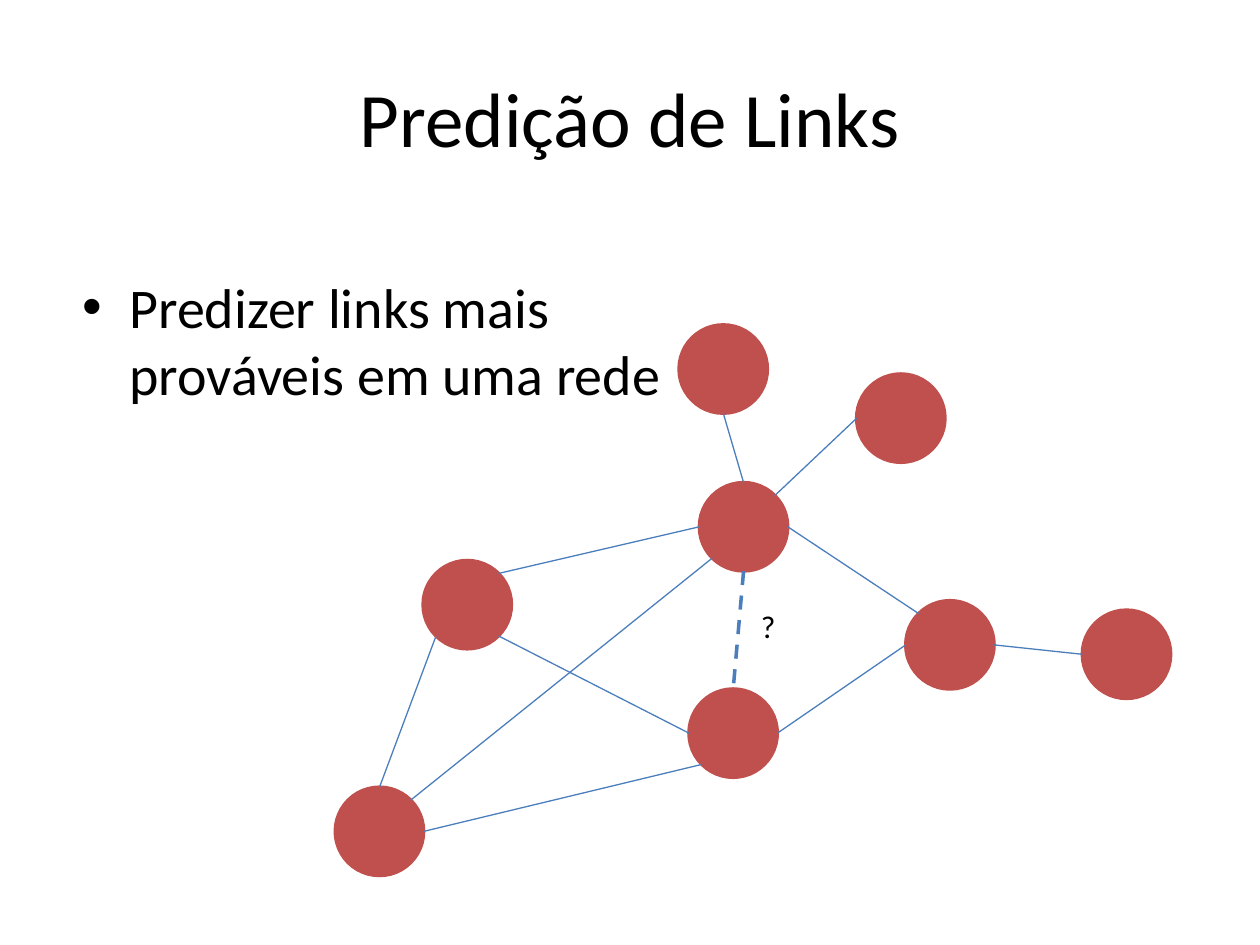
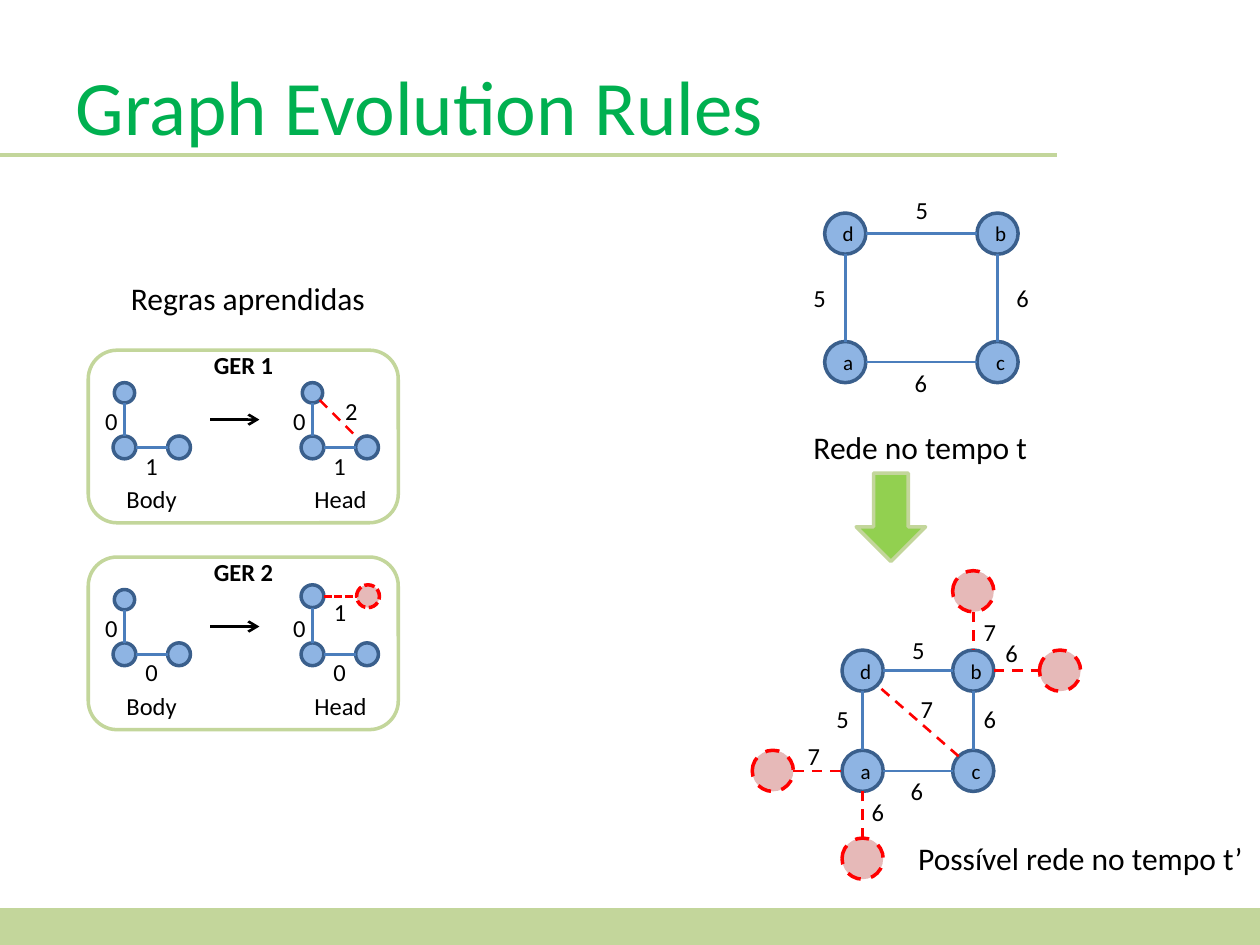
from collections import namedtuple
from math import cos, radians, sin

from lxml.etree import SubElement as Sub
from pptx import Presentation
from pptx.dml.color import RGBColor
from pptx.enum.dml import MSO_LINE as Dash
from pptx.enum.shapes import MSO_CONNECTOR as Wire, MSO_SHAPE as Form
from pptx.enum.text import MSO_ANCHOR as Anchor, MSO_AUTO_SIZE as Fit, PP_ALIGN as Align
from pptx.oxml.ns import qn
from pptx.util import Cm, Pt

FONT = "Calibri"
BLACK, RED, BRICK = "000000", "FF0000", "C0504D"
BLUE, SKY, NAVY = "4B7EBC", "8EB4E3", "3A5F8C"
PINK, SAGE, LIME, GREEN = "E6B9B8", "C3D69B", "92D050", "00B050"
TOP, TOP_L, LEFT, LOW_L, LOW, LOW_R, RIGHT, TOP_R = range(8)

Node = namedtuple("Node", "x y size")


def tint(code):
    return RGBColor.from_string(code)


def spot(node, site):
    turn = radians(90 + 45 * site)
    half = node.size / 2
    return node.x + half * cos(turn), node.y - half * sin(turn)


class Deck:
    """Holds the shared style and draws on the current slide."""

    def __init__(self):
        self.show = Presentation()
        self.show.slide_width, self.show.slide_height = Cm(25.4), Cm(19.05)

    def start(self, layout, text, y, color=BLACK, align=Align.CENTER):
        self.slide = self.show.slides.add_slide(self.show.slide_layouts[layout])
        self.fill_in(self.slide.shapes.title, text, (1.27, y, 22.86, 3.18),
                     44, color, align, Anchor.MIDDLE)

    def fill_in(self, holder, text, box, size, color, align, anchor):
        holder.left, holder.top, holder.width, holder.height = map(Cm, box)
        frame = holder.text_frame
        frame.text = text
        frame.auto_size = Fit.NONE
        frame.vertical_anchor = anchor
        self.style(frame, size, color, align)

    def style(self, frame, size, color=BLACK, align=Align.LEFT, bold=False):
        for para in frame.paragraphs:
            para.alignment = align
            for run in para.runs:
                font = run.font
                font.name, font.size, font.bold = FONT, Pt(size), bold
                font.color.rgb = tint(color)

    def list(self, text, box):
        self.fill_in(self.slide.placeholders[1], text, box, 32, BLACK,
                     Align.LEFT, Anchor.TOP)

    def label(self, text, x, y, wide=0.76, size=14, bold=False):
        high = 0.86 if size == 14 else 1.02
        box = self.slide.shapes.add_textbox(Cm(x), Cm(y), Cm(wide), Cm(high))
        frame = box.text_frame
        frame.text = text
        frame.word_wrap = False
        frame.auto_size = Fit.SHAPE_TO_FIT_TEXT
        self.style(frame, size, bold=bold)

    def shape(self, form, box, fill=None, edge=None, dash=None):
        item = self.slide.shapes.add_shape(form, *map(Cm, box))
        item.shadow.inherit = False
        if fill:
            item.fill.solid()
            item.fill.fore_color.rgb = tint(fill)
        else:
            item.fill.background()
        if edge:
            item.line.color.rgb = tint(edge)
            item.line.width = Pt(2)
            item.line.dash_style = dash
        else:
            item.line.fill.background()
        return item

    def node(self, x, y, size, text="", fill=SKY, edge=NAVY, dash=None):
        box = x - size / 2, y - size / 2, size, size
        item = self.shape(Form.OVAL, box, fill, edge, dash)
        if text:
            frame = item.text_frame
            frame.text = text
            frame.word_wrap = False
            frame.vertical_anchor = Anchor.MIDDLE
            frame.margin_left = Cm(0.12)
            frame.margin_right = frame.margin_top = frame.margin_bottom = 0
            self.style(frame, 12, align=Align.CENTER)
        return Node(x, y, size)

    def ghost(self, x, y, size=0.83, dash=Dash.DASH):
        return self.node(x, y, size, fill=PINK, edge=RED, dash=dash)

    def line(self, start, end, color=BLUE, width=1.5, dash=None, arrow=False):
        wire = self.slide.shapes.add_connector(
            Wire.STRAIGHT, *map(Cm, (*start, *end)))
        wire.line.color.rgb = tint(color)
        wire.line.width = Pt(width)
        wire.line.dash_style = dash
        props = wire.element.spPr
        if arrow:
            Sub(props.find(qn("a:ln")), qn("a:tailEnd"), type="arrow")
        Sub(props, qn("a:effectLst"))

    def link(self, one, out, two, into, **look):
        self.line(spot(one, out), spot(two, into), **look)

    def square(self, x, y, wide, high, marks):
        a, b, c, d = (self.node(*place, 0.83, name) for name, place in (
            ("a", (x, y + high)), ("b", (x + wide, y)),
            ("c", (x + wide, y + high)), ("d", (x, y))))
        for ends in ((d, LOW, a, TOP), (b, LEFT, d, RIGHT),
                     (a, RIGHT, c, LEFT), (b, LOW, c, TOP)):
            self.link(*ends)
        for mark in marks:
            self.label(*mark)
        return a, b, c, d

    def angle(self, x, y, side, name, wide, rise=0.86, size=0.41):
        tip = self.node(x, y + rise, size)
        base = self.node(x, y + 1.96, 0.46)
        end = self.node(x + 1.1, y + 1.96, 0.46)
        self.link(tip, LOW, base, TOP)
        self.link(base, RIGHT, end, LEFT)
        self.label("0", x - 0.64, y + 1)
        self.label(side, x + 0.17, y + 1.9)
        self.label(name, x - 0.21, y + 2.58, wide)
        return tip, end

    def rule(self, y, name, side, **head):
        self.shape(Form.ROUNDED_RECTANGLE, (1.78, y, 6.25, 3.48), edge=SAGE)
        self.label(name, 4.06, y - 0.12, 1.7, bold=True)
        self.line((4.24, y + 1.4), (5.23, y + 1.4), BLACK, arrow=True)
        self.angle(2.51, y, side, "Body", 1.55)
        return self.angle(6.3, y, side, "Head", 1.57, **head)


def predict(deck):
    deck.start(1, "Predição de Links", 0.76)
    deck.list("Predizer links mais prováveis em uma rede", (1.4, 5.36, 12.62, 6.55))
    spots = ((14.78, 14.78), (19.15, 13), (7.65, 16.76), (14.99, 10.62),
             (14.58, 7.44), (18.16, 8.43), (22.71, 13.19), (9.42, 12.19))
    south, east, foot, hub, north, upper, far, west = (
        deck.node(x, y, 1.78, fill=BRICK, edge=BRICK) for x, y in spots)
    for ends in ((west, LOW_R, south, LEFT), (foot, RIGHT, south, LOW_L),
                 (west, TOP_R, hub, LEFT), (hub, RIGHT, east, TOP_L),
                 (south, RIGHT, east, LEFT), (hub, TOP, north, LOW),
                 (hub, TOP_R, upper, LEFT), (west, LOW_L, foot, TOP),
                 (east, RIGHT, far, LEFT), (hub, LOW_L, foot, TOP_R)):
        deck.link(*ends, width=0.75)
    deck.link(hub, LOW, south, TOP, width=2, dash=Dash.DASH)
    deck.label("?", 15.09, 12.12, 0.86, 18)


def evolve(deck):
    deck.start(5, "Graph Evolution Rules", 0.53, GREEN, Align.LEFT)
    deck.line((0, 3.12), (21.31, 3.12), SAGE, 2.25)
    deck.shape(Form.RECTANGLE, (0, 18.31, 25.4, 0.74), SAGE)
    for mark in (("Regras aprendidas", 2.39, 5.51, 5.28),
                 ("Rede no tempo t", 16.15, 8.51, 4.88),
                 ("Possível rede no tempo t’", 18.26, 16.79, 7.14)):
        deck.label(*mark, 18)

    tip, end = deck.rule(7.06, "GER 1", "1")
    deck.link(tip, LOW_R, end, TOP_L, color=RED, dash=Dash.DASH)
    deck.label("2", 6.71, 7.85)
    tip, end = deck.rule(11.23, "GER 2", "0", rise=0.79, size=0.46)
    fresh = deck.ghost(7.42, tip.y, 0.46, Dash.SQUARE_DOT)
    deck.link(tip, RIGHT, fresh, LEFT, color=RED, dash=Dash.SQUARE_DOT)
    deck.label("1", 6.48, 11.92)

    deck.square(17.04, 4.71, 3.07, 2.59, (
        ("5", 18.21, 3.81), ("6", 18.19, 7.29),
        ("5", 16.15, 5.59), ("6", 20.24, 5.59)))
    deck.shape(Form.DOWN_ARROW, (17.26, 9.54, 1.4, 1.78), LIME, SAGE)
    a, b, c, d = deck.square(17.39, 13.52, 2.23, 2.02, (
        ("5", 18.14, 12.67), ("6", 18.11, 15.52),
        ("5", 16.61, 14.07), ("6", 19.58, 14.07),
        ("6", 20.02, 12.73), ("6", 17.32, 15.95),
        ("7", 16.03, 14.81), ("7", 19.58, 12.32), ("7", 18.31, 13.87)))
    west, south = deck.ghost(15.58, a.y), deck.ghost(a.x, 17.31)
    north, east = deck.ghost(b.x, 11.92), deck.ghost(21.37, b.y)
    for ends in ((c, TOP_L, d, LOW_R), (west, RIGHT, a, LEFT),
                 (south, TOP, a, LOW), (north, LOW, b, TOP),
                 (b, RIGHT, east, LEFT)):
        deck.link(*ends, color=RED, dash=Dash.DASH)


def main():
    deck = Deck()
    predict(deck)
    evolve(deck)
    deck.show.save("out.pptx")


if __name__ == "__main__":
    main()
